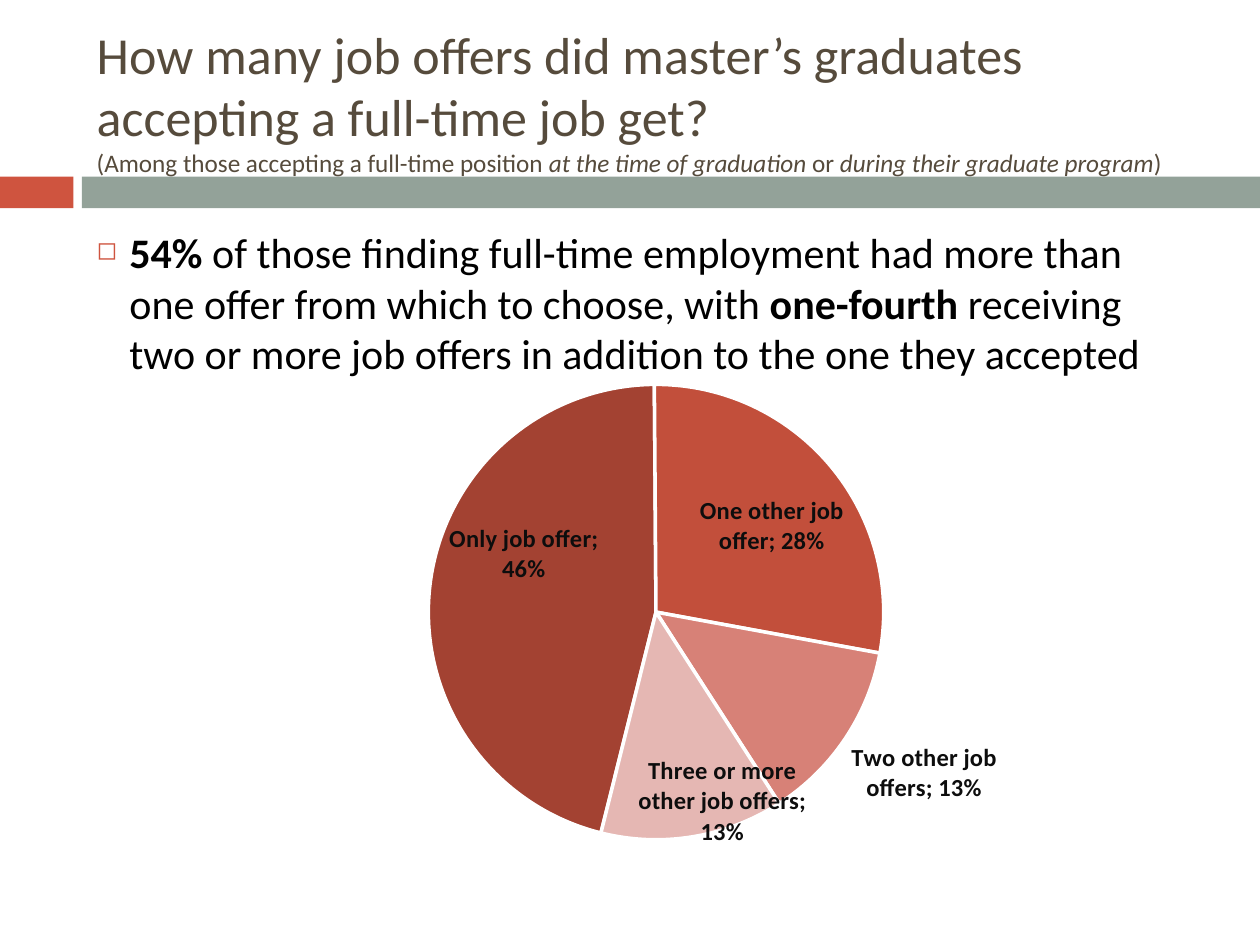
from dataclasses import dataclass

from lxml import etree
from pptx import Presentation
from pptx.chart.data import CategoryChartData
from pptx.dml.color import RGBColor
from pptx.enum.chart import XL_CHART_TYPE, XL_LABEL_POSITION
from pptx.enum.shapes import MSO_SHAPE
from pptx.enum.text import MSO_ANCHOR
from pptx.oxml import parse_xml
from pptx.oxml.ns import nsdecls, qn
from pptx.util import Cm, Pt

PIE = XL_CHART_TYPE.PIE
MID = XL_LABEL_POSITION.CENTER
OUTER = XL_LABEL_POSITION.OUTSIDE_END
RECT = MSO_SHAPE.RECTANGLE
TOP = MSO_ANCHOR.TOP
MIDDLE = MSO_ANCHOR.MIDDLE

RED = RGBColor(0xCF, 0x54, 0x3F)
SAGE = RGBColor(0x93, 0xA2, 0x99)
BROWN = RGBColor(0x56, 0x4B, 0x3C)
BLACK = RGBColor(0, 0, 0)
INK = RGBColor(0x0D, 0x0D, 0x0D)
WHITE = RGBColor(0xFF, 0xFF, 0xFF)
FONT = "Calibri"


@dataclass
class Bar:
    left: float
    width: float
    color: RGBColor


@dataclass
class Slice:
    name: str
    value: float
    color: RGBColor
    shift: tuple[float, float] | None = None


@dataclass
class Run:
    text: str
    size: float
    color: RGBColor
    bold: bool = False
    slant: bool = False


BARS = [Bar(0, 1.48, RED), Bar(1.65, 23.75, SAGE)]

SLICES = [
    Slice("Only job offer", 0.46, RGBColor(0xA3, 0x42, 0x32), (-0.02, -0.07)),
    Slice("One other job offer", 0.28, RGBColor(0xC2, 0x4F, 0x3B), (0.03, -0.02)),
    Slice("Two other job offers", 0.13, RGBColor(0xD7, 0x81, 0x77)),
    Slice("Three or more other job offers", 0.13, RGBColor(0xE5, 0xB7, 0xB3), (0.05, 0.12)),
]

HEAD = Run("How many job offers did master’s graduates accepting a full-time job get?", 29.7, BROWN)
NOTE = [
    Run("(Among those accepting a full-time position ", 14.4, BROWN),
    Run("at the time of graduation ", 14.4, BROWN, slant=True),
    Run("or ", 14.4, BROWN),
    Run("during their graduate program", 14.4, BROWN, slant=True),
    Run(")", 14.4, BROWN),
]
BODY = [
    Run("54% ", 24, BLACK, bold=True),
    Run("of those finding full-time employment had more than one offer "
        "from which to choose, with ", 24, BLACK),
    Run("one-fourth", 24, BLACK, bold=True),
    Run(" receiving two or more job offers in addition to the one they accepted", 24, BLACK),
]


def style(font, size: float, color: RGBColor, bold: bool = False) -> None:
    font.name = FONT
    font.size = Pt(size)
    font.bold = bold
    font.color.rgb = color


def add_bar(slide, bar: Bar) -> None:
    shape = slide.shapes.add_shape(RECT, Cm(bar.left), Cm(3.56), Cm(bar.width), Cm(0.64))
    shape.shadow.inherit = False
    shape.fill.solid()
    shape.fill.fore_color.rgb = bar.color
    shape.line.fill.background()


def add_box(slide, top: float, height: float, anchor):
    frame = slide.shapes.add_textbox(Cm(1.7), Cm(top), Cm(22.66), Cm(height)).text_frame
    frame.word_wrap = True
    frame.vertical_anchor = anchor
    return frame.paragraphs[0]


def add_run(para, item: Run) -> None:
    run = para.add_run()
    run.text = item.text
    style(run.font, item.size, item.color, item.bold)
    run.font.italic = item.slant


def add_mark(para) -> None:
    props = para._p.get_or_add_pPr()
    props.set("marL", str(Cm(0.66)))
    props.set("indent", str(Cm(-0.66)))
    color = etree.SubElement(props, qn("a:buClr"))
    etree.SubElement(color, qn("a:srgbClr"), val=str(RED))
    etree.SubElement(props, qn("a:buSzPct"), val="60000")
    etree.SubElement(props, qn("a:buChar"), char="◻")


def make_plan(**parts):
    tags = "".join(f'<c:{key} val="{val}"/>' for key, val in parts.items())
    return parse_xml(f'<c:layout {nsdecls("c")}><c:manualLayout>{tags}</c:manualLayout></c:layout>')


def show_name(node) -> None:
    node.find(qn("c:showCatName")).set("val", "1")
    node.find(qn("c:showPercent")).set("val", "0")
    gap = etree.Element(qn("c:separator"))
    gap.text = "; "
    node.find(qn("c:showBubbleSize")).addnext(gap)


def add_slice(point, item: Slice) -> None:
    point.format.fill.solid()
    point.format.fill.fore_color.rgb = item.color
    point.format.line.color.rgb = WHITE
    point.format.line.width = Pt(2)
    label = point.data_label
    style(label.font, 14, INK, True)
    label.position = MID if item.shift else OUTER
    node = label._dLbl
    show_name(node)
    if item.shift:
        x, y = item.shift
        node.find(qn("c:idx")).addnext(make_plan(x=x, y=y))


def add_pie(slide) -> None:
    data = CategoryChartData(number_format="0%")
    data.categories = [item.name for item in SLICES]
    data.add_series("Series 1", [item.value for item in SLICES])
    chart = slide.shapes.add_chart(PIE, Cm(3.2), Cm(5.94), Cm(19.28), Cm(12.93), data).chart
    chart.has_title = False
    chart.has_legend = False
    style(chart.font, 10, BLACK)
    plot = chart.plots[0]
    plot.vary_by_categories = True
    series = plot.series[0]
    labels = series.data_labels
    style(labels.font, 14, INK, True)
    labels.number_format = "0%"
    labels.number_format_is_linked = False
    labels.show_value = True
    show_name(labels._element)
    for spot, item in enumerate(SLICES):
        add_slice(series.points[spot], item)
    root = plot._element
    for old in root.findall(qn("c:firstSliceAng")):
        root.remove(old)
    etree.SubElement(root, qn("c:firstSliceAng"), val="194")
    area = root.getparent()
    for old in area.findall(qn("c:layout")):
        area.remove(old)
    area.insert(0, make_plan(layoutTarget="inner", xMode="edge", yMode="edge",
                             x=0.28, y=0.14, w=0.48, h=0.71))


def main() -> None:
    deck = Presentation()
    deck.slide_width, deck.slide_height = Cm(25.4), Cm(19.05)
    slide = deck.slides.add_slide(deck.slide_layouts[6])
    for bar in BARS:
        add_bar(slide, bar)
    title = add_box(slide, 0.64, 2.74, MIDDLE)
    add_run(title, HEAD)
    title.add_line_break()
    for item in NOTE:
        add_run(title, item)
    body = add_box(slide, 4.45, 14.6, TOP)
    body.space_before = Pt(5.2)
    add_mark(body)
    for item in BODY:
        add_run(body, item)
    add_pie(slide)
    deck.save("out.pptx")


if __name__ == "__main__":
    main()
